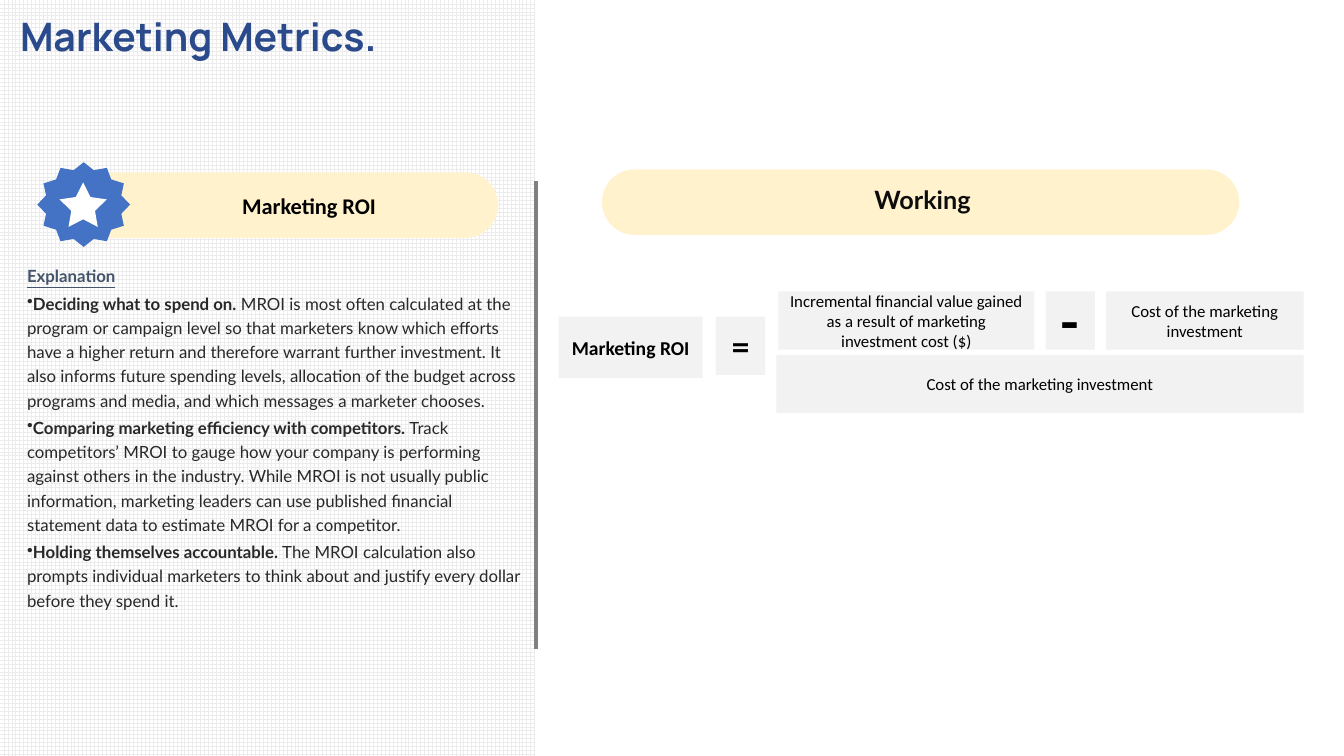
"""Build a slide that explains marketing ROI and shows its formula."""
from lxml import etree
from pptx import Presentation
from pptx import util as u
from pptx.dml.color import RGBColor
from pptx.enum import dml, shapes, text
from pptx.oxml.ns import qn

KIND = shapes.MSO_SHAPE
ALIGN = text.PP_ALIGN
ANCHOR = text.MSO_ANCHOR

TITLE = "Marketing Metrics."
REASONS = [
    ("Deciding what to spend on.",
     "\N{NO-BREAK SPACE}MROI is most often calculated at the program or campaign level so that "
     "marketers know which efforts have a higher return and therefore warrant further investment. "
     "It also informs future spending levels, allocation of the budget across programs and media, "
     "and which messages a marketer chooses."),
    ("Comparing marketing efficiency with competitors.",
     "\N{NO-BREAK SPACE}Track competitors’ MROI to gauge how your company is performing against "
     "others in the industry. While MROI is not usually public information, marketing leaders can "
     "use published financial statement data to estimate MROI\N{NO-BREAK SPACE}for a competitor."),
    ("Holding themselves accountable.",
     "\N{NO-BREAK SPACE}The MROI calculation also prompts individual marketers to think about and "
     "justify every dollar before they spend it."),
]
COST = "Cost of the marketing investment"
GAIN = "Incremental financial value gained as a result of marketing investment cost ($)"
FORMULA = [
    ("Marketing ROI", (5.54, 3.14, 1.43, 0.61), dict(size=14, bold=True)),
    (GAIN, (7.72, 2.89, 2.54, 0.58), dict(size=12)),
    ("=", (7.1, 3.14, 0.49, 0.58), dict(size=24, bold=True, font="Lato")),
    (COST, (7.7, 3.52, 5.23, 0.58), dict(size=12)),
    (COST, (10.97, 2.89, 1.96, 0.58), dict(size=12)),
    ("-", (10.37, 2.89, 0.49, 0.58), dict(size=40, bold=True, font="Lato")),
]


def color(value):
    return RGBColor.from_string(value)


def place(at):
    return [u.Inches(length) for length in at]


def add_span(para, words, size=12, font="Calibri", ink="000000", bold=False, underline=False):
    span = para.add_run()
    span.text = words
    span.font.size = u.Pt(size)
    span.font.name = font
    span.font.bold = bold
    span.font.underline = underline
    span.font.color.rgb = color(ink)


def write(box, words, align=ALIGN.CENTER, anchor=ANCHOR.MIDDLE, **style):
    frame = box.text_frame
    frame.word_wrap = True
    frame.vertical_anchor = anchor
    para = frame.paragraphs[0]
    para.alignment = align
    add_span(para, words, **style)
    return frame


def add_shape(parent, kind, at, fill=None, adjust=()):
    shape = parent.shapes.add_shape(kind, *place(at))
    shape.shadow.inherit = False
    shape.line.fill.background()
    for index, value in enumerate(adjust):
        shape.adjustments[index] = value
    if fill:
        shape.fill.solid()
        shape.fill.fore_color.rgb = color(fill)
    return shape


def add_text(parent, at, words, **style):
    return write(parent.shapes.add_textbox(*place(at)), words, **style)


def add_explanation(slide):
    frame = add_text(slide, (0.17, 2.55, 5.14, 3.89), "Explanation", align=ALIGN.LEFT,
                     anchor=ANCHOR.TOP, font="Lato", ink="44546A", bold=True, underline=True)
    frame.paragraphs[0].line_spacing = 1.2
    for lead, detail in REASONS:
        para = frame.add_paragraph()
        props = para._p.get_or_add_pPr()
        props.set("marL", "0")
        props.set("indent", "0")
        etree.SubElement(props, qn("a:buChar"), char="•")
        para.line_spacing = 1.2
        para.space_before = u.Pt(2.4)
        add_span(para, lead, font="Lato", ink="282828", bold=True)
        add_span(para, detail, font="Lato", ink="282828")


def add_divider(slide):
    line = slide.shapes.add_connector(shapes.MSO_CONNECTOR.STRAIGHT,
                                      *place((5.32, 1.8, 5.32, 6.44)))
    line.line.color.rgb = color("808080")
    line.line.width = u.Pt(3)
    etree.SubElement(line._element.spPr, qn("a:effectLst"))


def main():
    deck = Presentation()
    deck.slide_width, deck.slide_height = u.Inches(13.33), u.Inches(7.5)
    slide = deck.slides.add_slide(deck.slide_layouts[6])

    panel = add_shape(slide, KIND.RECTANGLE, (0, 0, 5.31, 7.5))
    panel.fill.patterned()
    panel.fill.pattern = dml.MSO_PATTERN.LARGE_GRID
    panel.fill.fore_color.rgb = color("ECECEC")
    panel.fill.back_color.rgb = color("FFFFFF")

    add_text(slide, (0.1, 0.07, 4.22, 0.57), TITLE, align=ALIGN.LEFT, anchor=ANCHOR.TOP,
             size=28, font="Manrope", ink="2A4A8B", bold=True)
    add_explanation(slide)

    working = slide.shapes.add_group_shape()
    add_shape(working, KIND.ROUNDED_RECTANGLE, (5.97, 1.68, 6.32, 0.65), "FFF2CC", [0.5])
    add_text(working, (6.24, 1.78, 5.82, 0.4), "Working", anchor=ANCHOR.BOTTOM,
             size=18, font="Lato", ink="0D0D0D", bold=True)

    add_divider(slide)

    metric = slide.shapes.add_group_shape()
    add_shape(metric, KIND.ROUNDED_RECTANGLE, (0.52, 1.71, 4.42, 0.65), "FFF2CC", [0.5])
    add_shape(metric, KIND.STAR_12_POINT, (0.37, 1.61, 0.92, 0.84), "4472C4", [0.42])
    add_shape(metric, KIND.STAR_5_POINT, (0.59, 1.81, 0.47, 0.44), "FFFFFF", [0.25, 1.05, 1.11])
    add_text(metric, (1.29, 1.85, 3.55, 0.37), "Marketing ROI", size=16, bold=True)

    for words, at, style in FORMULA:
        frame = write(add_shape(slide, KIND.RECTANGLE, at, "F2F2F2"), words, **style)
        frame.margin_top = frame.margin_bottom = 0

    deck.save("out.pptx")


if __name__ == "__main__":
    main()
